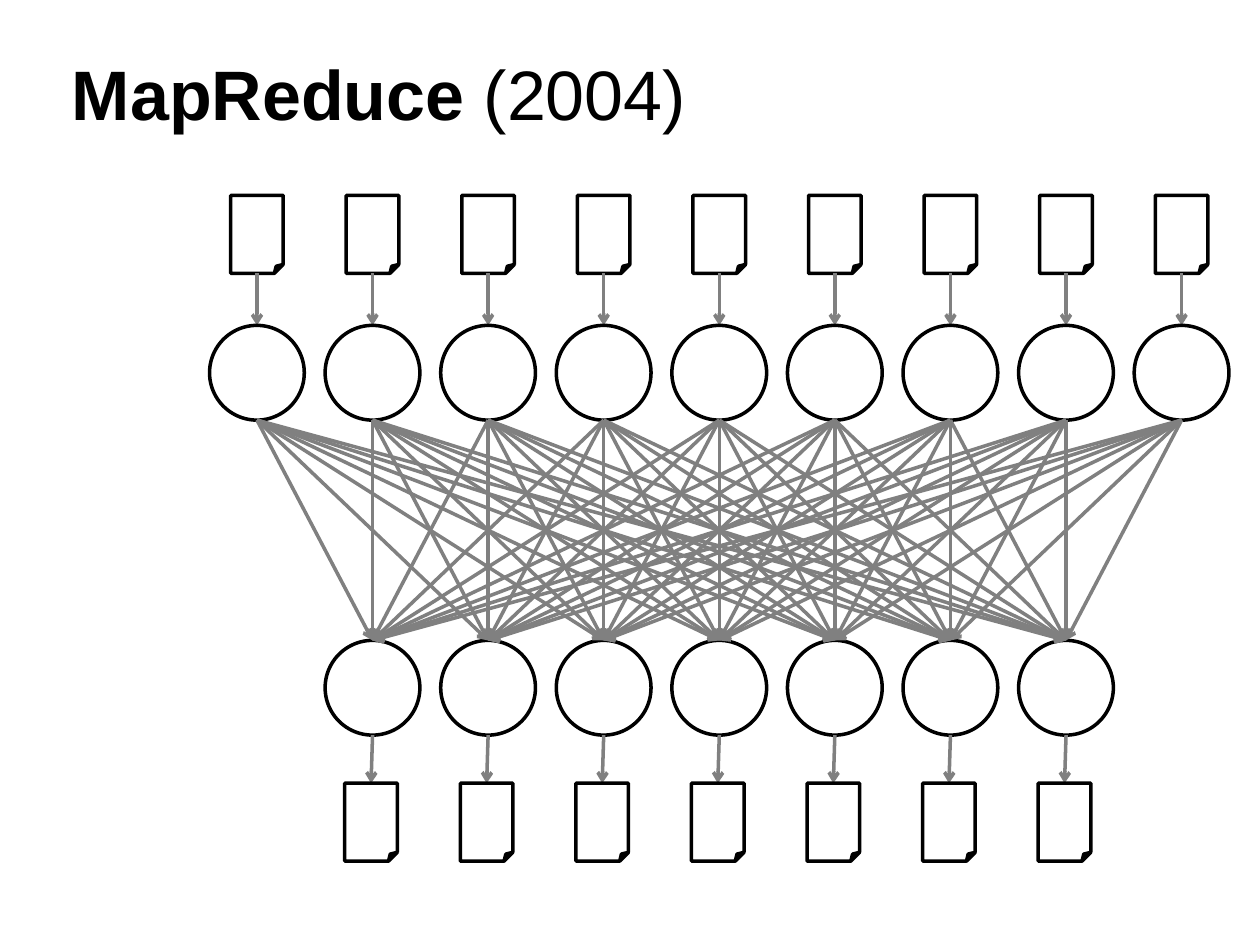
from lxml import etree
from pptx import Presentation, util as u
from pptx.dml.color import RGBColor
from pptx.enum import shapes, text
from pptx.oxml.ns import qn

BLACK = RGBColor(0x00, 0x00, 0x00)
GREY = RGBColor(0x80, 0x80, 0x80)
WHITE = RGBColor(0xFF, 0xFF, 0xFF)

# Layout in centimetres
PITCH = 2.33
NODE = 1.91
PAGE_W, PAGE_H = 1.06, 1.57
INPUT_TOP, MAP_TOP, REDUCE_TOP, OUTPUT_TOP = 3.94, 6.56, 12.91, 15.79
OUTPUT_SHIFT = -0.03
map_centres = [5.18 + PITCH * i for i in range(9)]
reduce_centres = map_centres[1:-1]

prs = Presentation()
prs.slide_width, prs.slide_height = u.Cm(25.4), u.Cm(19.05)
slide = prs.slides.add_slide(prs.slide_layouts[5])


def add_outlined(kind, centre, top, width, height):
    sp = slide.shapes.add_shape(
        kind, u.Cm(centre - width / 2), u.Cm(top), u.Cm(width), u.Cm(height))
    sp.shadow.inherit = False
    sp.fill.solid()
    sp.fill.fore_color.rgb = WHITE
    sp.line.color.rgb = BLACK
    sp.line.width = u.Pt(2)


def add_arrow(x1, y1, x2, y2):
    line = slide.shapes.add_connector(
        shapes.MSO_CONNECTOR.STRAIGHT, u.Cm(x1), u.Cm(y1), u.Cm(x2), u.Cm(y2))
    line.line.color.rgb = GREY
    line.line.width = u.Pt(2)
    etree.SubElement(line.line._get_or_add_ln(), qn("a:tailEnd"), type="arrow")
    etree.SubElement(line._element.spPr, qn("a:effectLst"))


# Title
title = slide.shapes.title
title_box = {"left": 1.27, "top": 0.76, "width": 22.86, "height": 3.18}
for name, value in title_box.items():
    setattr(title, name, u.Cm(value))
tf = title.text_frame
frame_format = {
    "margin_left": u.Cm(0.18), "margin_top": u.Cm(0.25), "word_wrap": True,
    "auto_size": text.MSO_AUTO_SIZE.NONE, "vertical_anchor": text.MSO_ANCHOR.TOP,
}
for name, value in frame_format.items():
    setattr(tf, name, value)
p = tf.paragraphs[0]
p.alignment = text.PP_ALIGN.LEFT
for words, bold in (("MapReduce ", True), ("(2004)", False)):
    r = p.add_run()
    r.text = words
    for name, value in {"name": "Arial", "size": u.Pt(40), "bold": bold}.items():
        setattr(r.font, name, value)
    r.font.color.rgb = BLACK

# Input pages and mappers
for x in map_centres:
    add_outlined(shapes.MSO_SHAPE.FOLDED_CORNER, x, INPUT_TOP, PAGE_W, PAGE_H)
    add_arrow(x, INPUT_TOP + PAGE_H, x, MAP_TOP)
    add_outlined(shapes.MSO_SHAPE.OVAL, x, MAP_TOP, NODE, NODE)

# Reducers and output pages
for x in reduce_centres:
    out_x = x + OUTPUT_SHIFT
    add_outlined(shapes.MSO_SHAPE.OVAL, x, REDUCE_TOP, NODE, NODE)
    add_arrow(x, REDUCE_TOP + NODE, out_x, OUTPUT_TOP)
    add_outlined(shapes.MSO_SHAPE.FOLDED_CORNER, out_x, OUTPUT_TOP, PAGE_W, PAGE_H)

# Shuffle: every mapper feeds every reducer
for x1 in map_centres:
    for x2 in reduce_centres:
        add_arrow(x1, MAP_TOP + NODE, x2, REDUCE_TOP)

prs.save("out.pptx")
